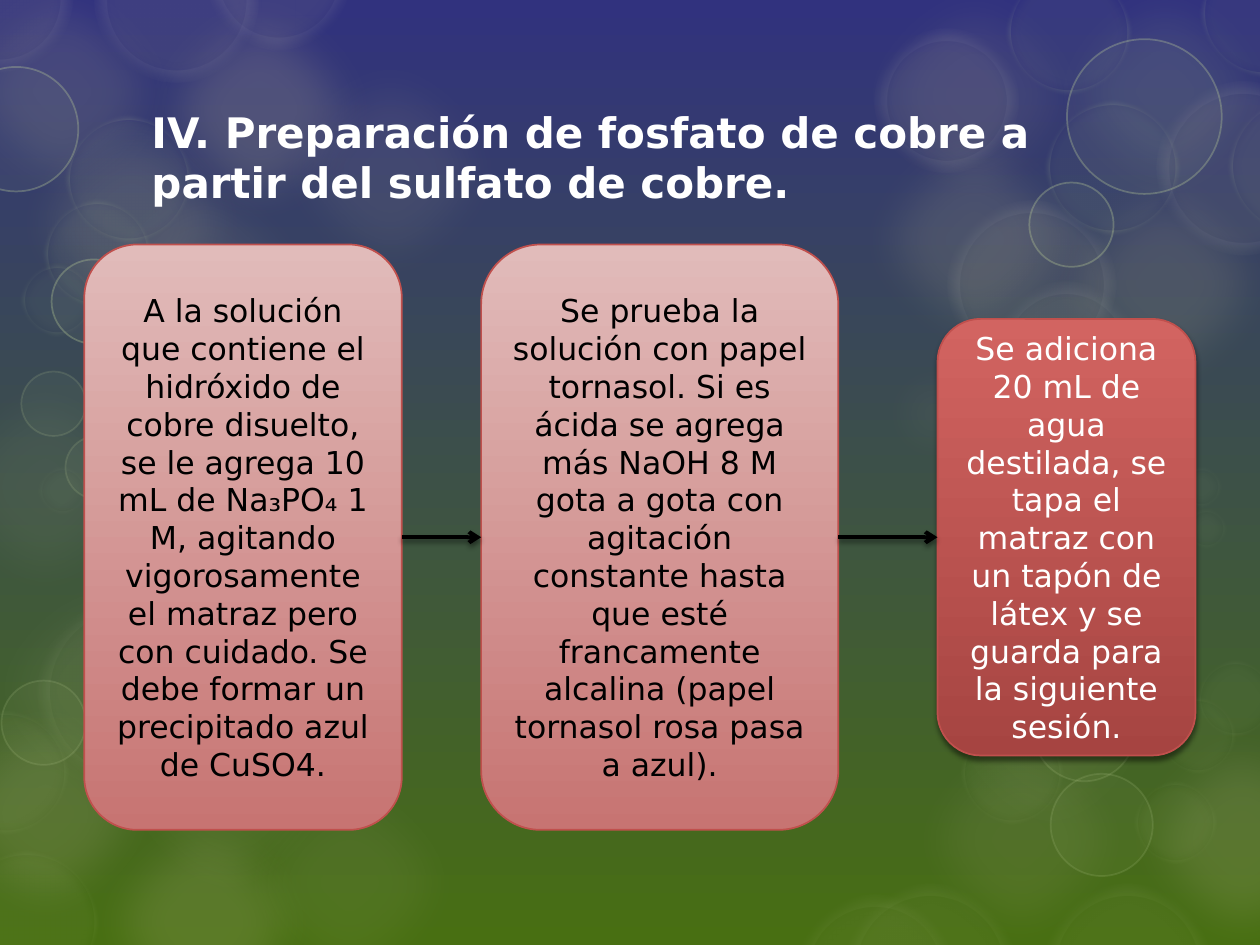
from dataclasses import dataclass
from itertools import pairwise

from lxml import etree
from pptx import Presentation
from pptx import util as u
from pptx.dml import color as c
from pptx.enum import shapes, text
from pptx.oxml import ns


@dataclass(frozen=True)
class Theme:
    """Colours, font and type sizes of the slide."""
    font: str = "DejaVu Sans"
    title_size: int = 24
    body_size: int = 18
    light: str = "FFFFFF"
    dark: str = "000000"
    sky: tuple = ("31327E", "486F12")
    pale_card: tuple = ("E1BBBA", "C77472")
    strong_card: tuple = ("D26461", "A64441")
    card_line: str = "C0504D"
    sand: str = "C4BD97"
    leaf: str = "C3D69B"
    cream: str = "F5F4ED"


@dataclass(frozen=True)
class Bubble:
    """Look of a bubble: fill, outline, opacities in percent and blur in points."""
    fill: str
    opacity: int
    blur: float = 0
    line: str = ""
    width: float = 0
    line_opacity: int = 0


THEME = Theme()
WIDTH, HEIGHT = 25.4, 19.05
GLOW = 5.31


def glow(opacity, fill=THEME.sand):
    """Return the style of a blurred, unlined bubble."""
    return Bubble(fill, opacity, 25)


def halo(opacity, line_opacity):
    """Return the style of a bubble with a broad soft outline."""
    return Bubble(THEME.sand, opacity, 9, THEME.cream, 14, line_opacity)


def ring(line_opacity):
    """Return the style of a crisp, thinly outlined bubble."""
    return Bubble(THEME.leaf, 5, 0, THEME.leaf, 1, line_opacity)


def soft_ring(line_opacity):
    """Return the style of a blurred, outlined bubble."""
    return Bubble(THEME.leaf, 5, 5, THEME.leaf, 5, line_opacity)


BUBBLES = [
    (glow(8), [(-0.65, 11.23, GLOW)]),
    (glow(10), [(1.45, 3.05, GLOW), (5.21, 0.79, GLOW)]),
    (glow(16), [(1.45, 15.93, GLOW)]),
    (glow(14), [(-1.41, -0.82, GLOW)]),
    (glow(20), [(2.57, -0.46, GLOW)]),
    (glow(15), [(0, 1.83, GLOW)]),
    (glow(10, THEME.leaf), [(20.83, -0.82, GLOW)]),
    (glow(10), [(16.99, -0.74, GLOW)]),
    (glow(15), [(20.83, 3.05, GLOW)]),
    (glow(16), [(22.38, 14.27, GLOW)]),
    (glow(5), [(18.52, 12.12, GLOW)]),
    (glow(16), [(-1.75, 13.74, GLOW)]),
    (glow(8), [(1.96, 13.31, GLOW)]),
    (glow(15), [(16.99, 2.18, GLOW)]),
    (glow(10), [(17.93, 14.27, GLOW)]),
    (halo(10, 6), [(23.32, 1.65, 3.48), (17.63, 0.58, 2.9), (19.1, 4.04, 3.38),
                   (20.04, 5.69, 2.9), (21.51, 7.39, 2.01), (1.91, -1.65, 3.3),
                   (4.17, -1.9, 2.9), (-1.45, -1.47, 2.9)]),
    (halo(6, 4), [(0.76, 12.01, 3.89), (16.05, 18.03, 3.18), (17, 17.81, 3.48),
                  (21.04, 17.81, 3.38)]),
    (ring(15), [(0.03, 13.72, 1.7)]),
    (soft_ring(15), [(-0.9, 17.15, 2.87), (-1.12, 14.33, 2.49)]),
    (ring(30), [(-0.93, 1.35, 2.51)]),
    (soft_ring(30), [(1.32, 2.34, 2.54), (0.89, 4.04, 2.16)]),
    (ring(30), [(1.04, 5.23, 1.7)]),
    (soft_ring(30), [(0.43, 5.33, 1.45), (20.29, -0.61, 2.51), (24.21, -1, 2.54)]),
    (ring(30), [(21.51, 0.79, 3.12)]),
    (soft_ring(30), [(24.77, 1.96, 2.79), (21.08, 2.03, 2.69)]),
    (ring(30), [(20.75, 3.68, 1.7)]),
    (ring(15), [(21.18, 15.6, 2.06)]),
    (soft_ring(15), [(19.38, 14.55, 2.06)]),
    (ring(15), [(20.83, 13.69, 2.06)]),
    (soft_ring(15), [(22.86, 15.75, 1.68), (22.43, 11.38, 1.55), (23.37, 14.05, 1.55),
                     (24.13, 13.31, 1.55)]),
    (glow(8), [(4.39, 15.14, GLOW)]),
    (soft_ring(15), [(23.8, 9.4, 0.84), (23.32, 9.83, 0.84), (23.9, 10.24, 0.84)]),
    (ring(15), [(0.43, 7.49, 1.3), (1.32, 8.79, 1.27)]),
    (soft_ring(15), [(0.76, 9.4, 0.99)]),
    (glow(8), [(-1.75, 7.16, GLOW)]),
    (glow(10), [(17.15, 6.65, 3.38)]),
]

TITLE = "IV. Preparación de fosfato de cobre a partir del sulfato de cobre."
STEPS = [
    ("A la solución que contiene el hidróxido de cobre disuelto, se le agrega 10 mL de "
     "Na₃PO₄ 1 M, agitando vigorosamente el matraz pero con cuidado. Se debe formar un "
     "precipitado azul de CuSO4.", (1.7, 4.93, 6.4, 11.8), THEME.pale_card, THEME.dark, False),
    ("Se prueba la solución con papel tornasol. Si es ácida se agrega más NaOH 8 M gota a "
     "gota con agitación constante hasta que esté francamente alcalina (papel tornasol rosa "
     "pasa a azul).", (9.7, 4.93, 7.2, 11.8), THEME.pale_card, THEME.dark, False),
    ("Se adiciona 20 mL de agua destilada, se tapa el matraz con un tapón de látex y se "
     "guarda para la siguiente sesión.", (18.9, 6.43, 5.2, 8.8), THEME.strong_card,
     THEME.light, True),
]


def rgb(value):
    """Turn a hexadecimal string into a colour."""
    return c.RGBColor.from_string(value)


def set_gradient(fill, colors):
    """Fill from the first colour at the top to the second at the bottom."""
    fill.gradient()
    fill.gradient_angle = 270
    for stop, value in zip(fill.gradient_stops, colors):
        stop.color.rgb = rgb(value)


def add_effect(shape, name, **attributes):
    """Add an effect to a shape and return its element."""
    properties = shape._element.spPr
    effects = properties.find(ns.qn("a:effectLst"))
    if effects is None:
        effects = etree.SubElement(properties, ns.qn("a:effectLst"))
    return etree.SubElement(effects, ns.qn(name), attributes)


def add_drop_shadow(shape):
    """Give a shape a small shadow below it."""
    shadow = add_effect(shape, "a:outerShdw", blurRad=str(u.Pt(3)), dist=str(u.Pt(2)),
                        dir="5400000", rotWithShape="0")
    color = etree.SubElement(shadow, ns.qn("a:srgbClr"), val=THEME.dark)
    etree.SubElement(color, ns.qn("a:alpha"), val="45000")


def add_bubble(slide, style, left, top, size):
    """Add one translucent bubble and return it."""
    shape = slide.shapes.add_shape(shapes.MSO_SHAPE.OVAL, u.Cm(left), u.Cm(top),
                                   u.Cm(size), u.Cm(size))
    shape.shadow.inherit = False
    shape.fill.solid()
    shape.fill.fore_color.rgb = rgb(style.fill)
    if style.line:
        shape.line.color.rgb = rgb(style.line)
        shape.line.width = u.Pt(style.width)
    else:
        shape.line.fill.background()
    colors = shape._element.spPr.xpath(".//a:solidFill/a:srgbClr")
    for color, opacity in zip(colors, (style.opacity, style.line_opacity)):
        etree.SubElement(color, ns.qn("a:alpha"), val=str(opacity * 1000))
    if style.blur:
        add_effect(shape, "a:softEdge", rad=str(u.Pt(style.blur)))
    return shape


def add_backdrop(slide):
    """Paint the background and put the bubbles into the layout of the slide."""
    set_gradient(slide.background.fill, THEME.sky)
    bubbles = [add_bubble(slide, style, *circle)
               for style, circles in BUBBLES for circle in circles]
    for number, bubble in enumerate(bubbles, 100):
        bubble._element.nvSpPr.cNvPr.set("id", str(number))
        slide.slide_layout.shapes._spTree.append(bubble._element)


def write(shape, content, size, color, alignment, bold=False):
    """Write one middle-anchored paragraph into a shape."""
    frame = shape.text_frame
    frame.word_wrap = True
    frame.auto_size = text.MSO_AUTO_SIZE.NONE
    frame.vertical_anchor = text.MSO_ANCHOR.MIDDLE
    paragraph = frame.paragraphs[0]
    paragraph.alignment = alignment
    run = paragraph.add_run()
    run.text = content
    run.font.name = THEME.font
    run.font.size = u.Pt(size)
    run.font.bold = bold
    run.font.color.rgb = rgb(color)


def place_title(slide):
    """Position and write the title."""
    title = slide.shapes.title
    title.left, title.top, title.width, title.height = map(u.Cm, (2.8, 1.88, 19.8, 2.56))
    write(title, TITLE, THEME.title_size, THEME.light, text.PP_ALIGN.LEFT, True)


def add_step(slide, content, box, colors, ink, raised):
    """Add a rounded card with one step of the procedure."""
    card = slide.shapes.add_shape(shapes.MSO_SHAPE.ROUNDED_RECTANGLE, *map(u.Cm, box))
    card.shadow.inherit = False
    set_gradient(card.fill, colors)
    card.line.color.rgb = rgb(THEME.card_line)
    card.line.width = u.Pt(1)
    if raised:
        add_drop_shadow(card)
    write(card, content, THEME.body_size, ink, text.PP_ALIGN.CENTER)
    return card


def add_arrow(slide, start, end):
    """Join the facing sides of two cards with an arrow."""
    arrow = slide.shapes.add_connector(shapes.MSO_CONNECTOR.STRAIGHT, 0, 0, 0, 0)
    arrow.begin_connect(start, 3)
    arrow.end_connect(end, 1)
    arrow.line.color.rgb = rgb(THEME.dark)
    arrow.line.width = u.Pt(2.25)
    etree.SubElement(arrow.line._get_or_add_ln(), ns.qn("a:tailEnd"), type="arrow")
    add_drop_shadow(arrow)


def main():
    """Build the slide and save it."""
    presentation = Presentation()
    presentation.slide_width, presentation.slide_height = u.Cm(WIDTH), u.Cm(HEIGHT)
    slide = presentation.slides.add_slide(presentation.slide_layouts.get_by_name("Title Only"))
    add_backdrop(slide)
    place_title(slide)
    cards = [add_step(slide, *step) for step in STEPS]
    for start, end in pairwise(cards):
        add_arrow(slide, start, end)
    presentation.save("out.pptx")


if __name__ == "__main__":
    main()
